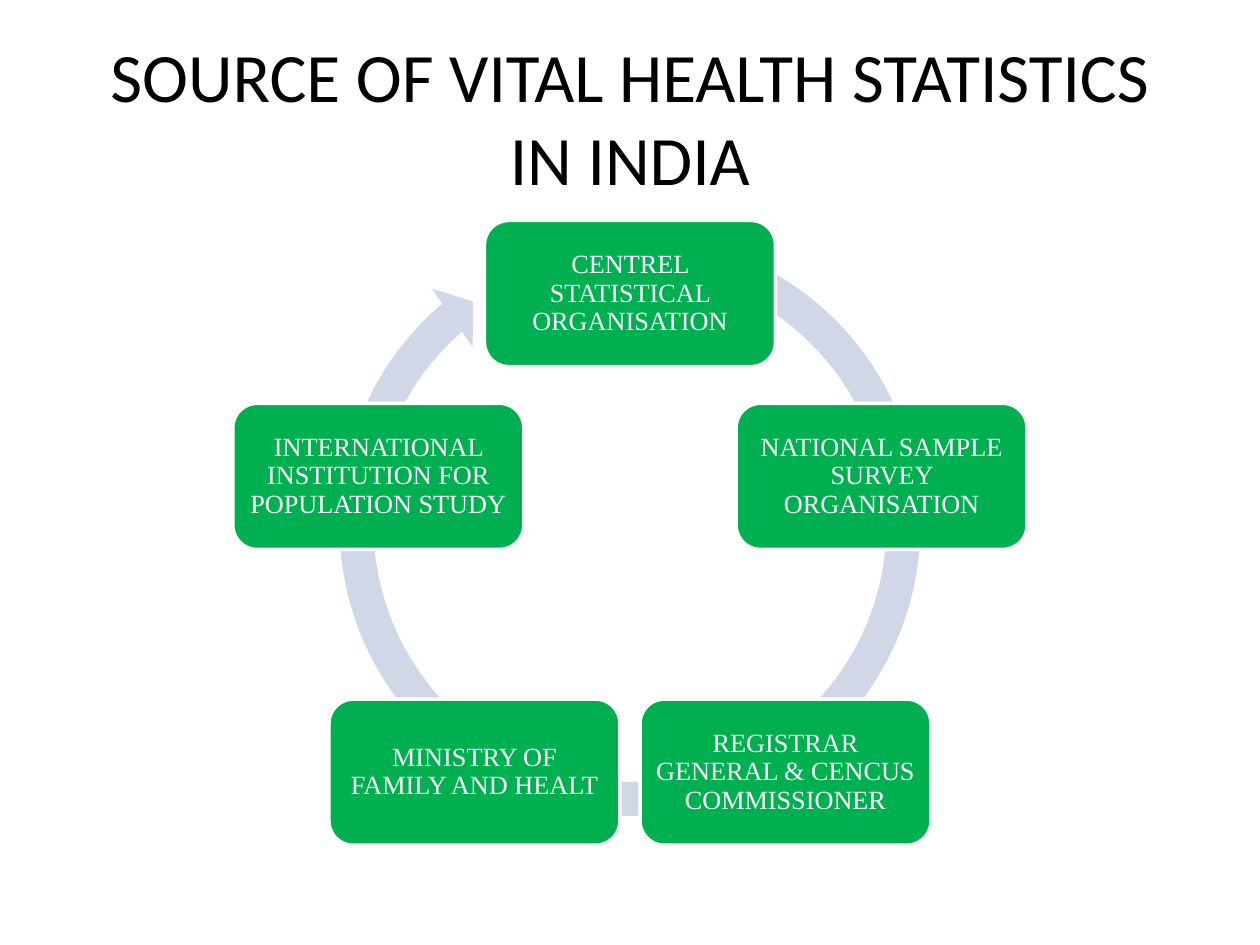
"""Build a slide showing the sources of vital health statistics as a cycle."""
import math

from pptx import Presentation
from pptx import util as u
from pptx.dml.color import RGBColor
from pptx.enum import shapes, text

WIDTH, HEIGHT = 10, 7.5
SOURCES = [
    "CENTREL STATISTICAL ORGANISATION",
    "NATIONAL SAMPLE SURVEY ORGANISATION",
    "REGISTRAR GENERAL & CENCUS COMMISSIONER",
    "MINISTRY OF FAMILY AND HEALT",
    "INTERNATIONAL INSTITUTION FOR POPULATION STUDY",
]


def colour(code):
    return RGBColor.from_string(code)


class CycleSlide:
    green, ring_blue, white, black = "00B050", "D0D8E8", "FFFFFF", "000000"
    title_font, box_font = "Calibri", "Times New Roman"
    title_size, box_size = 39.6, 15

    def __init__(self, deck):
        self.page = deck.slides.add_slide(deck.slide_layouts[5])

    def frame(self, centre_x, centre_y, width, height):
        left, top = centre_x - width / 2, centre_y - height / 2
        return [u.Inches(share * side) for share, side in
                zip((left, top, width, height), (WIDTH, HEIGHT) * 2)]

    def label(self, shape, words, font, size, code):
        frame = shape.text_frame
        frame.text = words
        frame.word_wrap = True
        frame.auto_size = text.MSO_AUTO_SIZE.NONE
        frame.vertical_anchor = text.MSO_ANCHOR.MIDDLE
        para = frame.paragraphs[0]
        para.alignment = text.PP_ALIGN.CENTER
        span = para.runs[0]
        span.font.name, span.font.size = font, u.Pt(size)
        span.font.color.rgb = colour(code)
        return frame

    def shape(self, kind, place, fill):
        shape = self.page.shapes.add_shape(kind, *self.frame(*place))
        shape.shadow.inherit = False
        shape.fill.solid()
        shape.fill.fore_color.rgb = colour(fill)
        return shape

    def title(self, words, *place):
        title = self.page.shapes.title
        title.left, title.top, title.width, title.height = self.frame(*place)
        self.label(title, words, self.title_font, self.title_size, self.black)

    def ring(self, *place):
        ring = self.shape(shapes.MSO_SHAPE.CIRCULAR_ARROW, place, self.ring_blue)
        ring.line.fill.background()
        for index, value in enumerate((0.055, 3.307, 137.657, 173.922, 0.058)):
            ring.adjustments[index] = value

    def box(self, words, *place):
        box = self.shape(shapes.MSO_SHAPE.ROUNDED_RECTANGLE, place, self.green)
        box.line.color.rgb = colour(self.white)
        box.line.width = u.Pt(2)
        frame = self.label(box, words, self.box_font, self.box_size, self.white)
        frame.margin_left = frame.margin_right = u.Inches(0.06)
        frame.margin_top = frame.margin_bottom = u.Inches(0.06)
        frame.paragraphs[0].line_spacing = 0.9

    def cycle(self, names, centre_x, centre_y, radius, width, height):
        for index, name in enumerate(names):
            angle = index * math.tau / len(names)
            self.box(name, centre_x + radius * math.sin(angle),
                     centre_y - radius * math.cos(angle) * WIDTH / HEIGHT,
                     width, height)


def main():
    deck = Presentation()
    deck.slide_width, deck.slide_height = u.Inches(WIDTH), u.Inches(HEIGHT)
    slide = CycleSlide(deck)
    slide.title("SOURCE OF VITAL HEALTH STATISTICS IN INDIA",
                0.5, 0.92 / HEIGHT, 0.9, 1.25 / HEIGHT)
    slide.ring(0.5, 4.17 / HEIGHT, 4.91 / WIDTH, 4.91 / HEIGHT)
    slide.cycle(SOURCES, 0.5, 4.43 / HEIGHT, 2.1 / WIDTH,
                2.31 / WIDTH, 1.16 / HEIGHT)
    deck.save("out.pptx")


if __name__ == "__main__":
    main()
